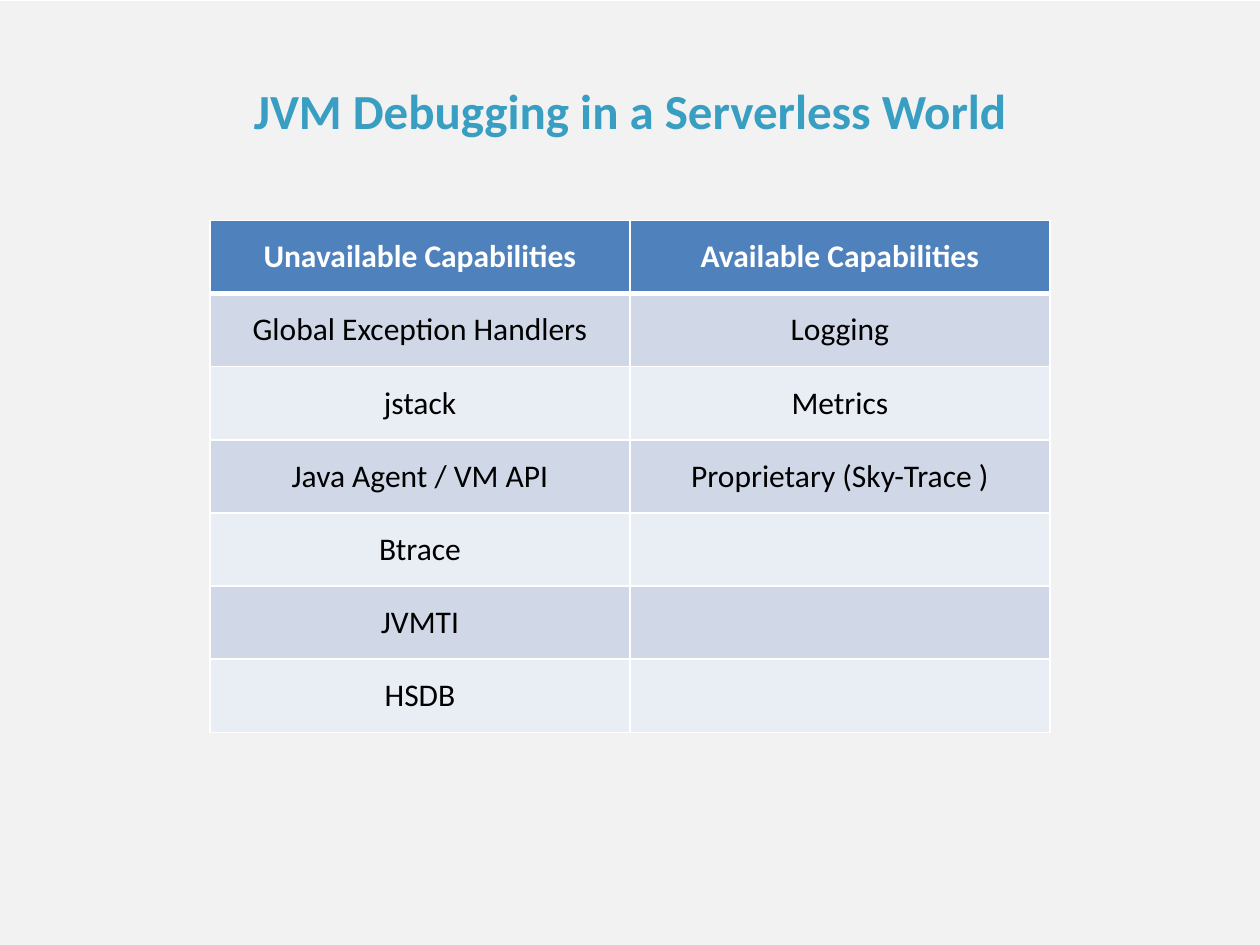
import pptx
import pptx.util
import pptx.dml.color
import pptx.enum.shapes
import pptx.enum.text
import pptx.oxml
import pptx.oxml.ns
from dataclasses import dataclass

Pt = pptx.util.Pt
RGB = pptx.dml.color.RGBColor.from_string


@dataclass(frozen=True)
class Theme:
    font: str = "Calibri"
    back: str = "F2F2F2"
    title: str = "389EC2"
    head: str = "4F81BD"
    bands: tuple = ("D0D8E8", "E9EDF4")
    light: str = "FFFFFF"
    dark: str = "000000"
    big: int = 28
    body: int = 18
    thin: int = 1
    thick: int = 3


class Deck:
    def __init__(self, theme, wide, high):
        self.theme = theme
        self.file = pptx.Presentation()
        self.file.slide_width, self.file.slide_height = Pt(wide), Pt(high)
        self.slide = self.file.slides.add_slide(self.file.slide_layouts[6])

    def label(self, frame, text, size, color, bold):
        para = frame.paragraphs[0]
        para.alignment = pptx.enum.text.PP_ALIGN.CENTER
        run = para.add_run()
        run.text = text
        look = {"name": self.theme.font, "size": Pt(size), "bold": bold}
        for key, value in look.items():
            setattr(run.font, key, value)
        run.font.color.rgb = RGB(color)

    def panel(self, box, color):
        kind = pptx.enum.shapes.MSO_SHAPE.RECTANGLE
        shape = self.slide.shapes.add_shape(kind, *map(Pt, box))
        shape.shadow.inherit = False
        shape.fill.solid()
        shape.fill.fore_color.rgb = RGB(color)
        shape.line.fill.background()

    def title(self, box, text):
        frame = self.slide.shapes.add_textbox(*map(Pt, box)).text_frame
        look = {"word_wrap": True,
                "vertical_anchor": pptx.enum.text.MSO_ANCHOR.MIDDLE}
        for key, value in look.items():
            setattr(frame, key, value)
        self.label(frame, text, self.theme.big, self.theme.title, True)

    def edge(self, cell, row):
        """Draw the four borders; the rule under the header is thick."""
        thin, thick = self.theme.thin, self.theme.thick
        widths = {"L": thin, "R": thin,
                  "T": thick if row == 1 else thin,
                  "B": thick if row == 0 else thin}
        props = cell._tc.get_or_add_tcPr()
        for spot, (side, width) in enumerate(widths.items()):
            props.insert(spot, pptx.oxml.parse_xml(
                f'<a:ln{side} {pptx.oxml.ns.nsdecls("a")} w="{Pt(width)}">'
                f'<a:solidFill><a:srgbClr val="{self.theme.light}"/>'
                f'</a:solidFill></a:ln{side}>'))

    def table(self, box, rows):
        theme = self.theme
        table = self.slide.shapes.add_table(
            len(rows), len(rows[0]), *map(Pt, box)).table
        for key in ("first_row", "horz_banding"):
            setattr(table, key, False)
        for line in table.rows:
            line.height = Pt(box[3] / len(rows))
        for r, texts in enumerate(rows):
            top = r == 0
            fill = theme.head if top else theme.bands[(r - 1) % 2]
            color = theme.light if top else theme.dark
            for c, text in enumerate(texts):
                cell = table.cell(r, c)
                cell.vertical_anchor = pptx.enum.text.MSO_ANCHOR.MIDDLE
                cell.fill.solid()
                cell.fill.fore_color.rgb = RGB(fill)
                self.edge(cell, r)
                if text:
                    self.label(cell.text_frame, text, theme.body, color, top)


def main():
    deck = Deck(Theme(), 720, 540)

    # Background and title
    deck.panel((0, 0.75, 720, 539.25), deck.theme.back)
    deck.title((36, 18, 648, 90), "JVM Debugging in a Serverless World")

    # Capabilities
    deck.table((120, 126, 480, 292.6), [
        ("Unavailable Capabilities", "Available Capabilities"),
        ("Global Exception Handlers", "Logging"),
        ("jstack", "Metrics"),
        ("Java Agent / VM API", "Proprietary (Sky-Trace )"),
        ("Btrace", ""),
        ("JVMTI", ""),
        ("HSDB", ""),
    ])

    deck.file.save("out.pptx")


if __name__ == "__main__":
    main()
